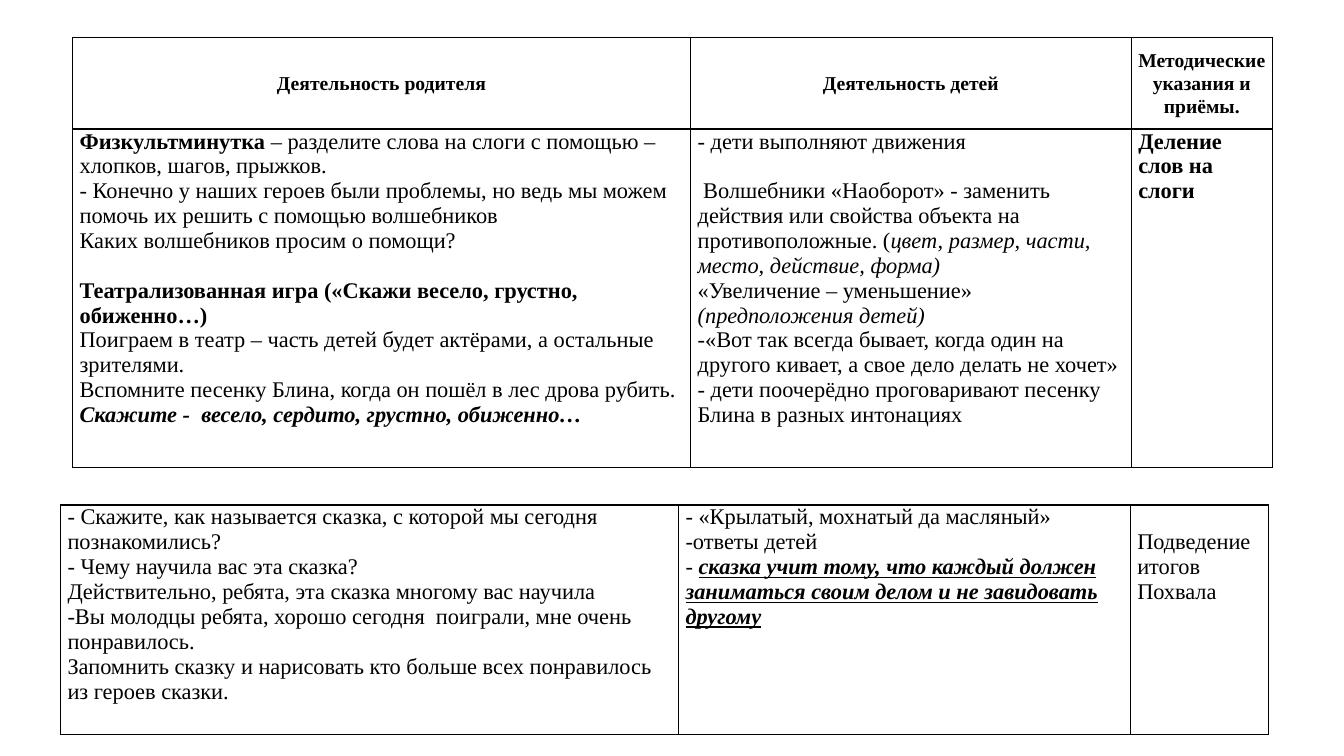
from pptx import Presentation, util as u
from pptx.dml.color import RGBColor
from pptx.enum import text
from pptx.oxml import parse_xml
from pptx.oxml.ns import nsdecls

INK, PAPER = "000000", "FFFFFF"


def color(value):
    return RGBColor.from_string(value)


def add_run(paragraph, content, font="Times New Roman", size=16, style=""):
    """Style letters: b is bold, i is italic, u is underlined."""
    run = paragraph.add_run()
    run.text = content
    run.font.name = font
    run.font.size = u.Pt(size)
    run.font.bold = "b" in style
    run.font.italic = "i" in style
    run.font.underline = "u" in style
    run.font.color.rgb = color(INK)


class LessonSlide:
    line_gap = u.Pt(17.7)
    side_margin = u.Inches(0.07)

    def __init__(self, presentation):
        self.slide = presentation.slides.add_slide(presentation.slide_layouts[6])

    def table(self, left, top, widths, heights):
        frame = self.slide.shapes.add_table(
            len(heights), len(widths), u.Inches(left), u.Inches(top),
            u.Inches(sum(widths)), u.Inches(sum(heights)))
        table = frame.table
        table.first_row = table.horz_banding = False
        for column, width in zip(table.columns, widths):
            column.width = u.Inches(width)
        for row, height in zip(table.rows, heights):
            row.height = u.Inches(height)
        for cell in table.iter_cells():
            self.cell_style(cell)
        return table

    def cell_style(self, cell):
        cell.margin_left = cell.margin_right = self.side_margin
        cell.margin_top = cell.margin_bottom = 0
        properties = cell._tc.get_or_add_tcPr()
        for side in "LRTB":
            properties.append(parse_xml(
                f'<a:ln{side} {nsdecls("a")} w="12700"><a:solidFill>'
                f'<a:srgbClr val="{INK}"/></a:solidFill></a:ln{side}>'))
        cell.fill.solid()
        cell.fill.fore_color.rgb = color(PAPER)

    def header(self, cell, title):
        cell.vertical_anchor = text.MSO_ANCHOR.MIDDLE
        paragraph = cell.text_frame.paragraphs[0]
        paragraph.alignment = text.PP_ALIGN.CENTER
        paragraph.line_spacing = 1.07
        add_run(paragraph, title, size=14, style="b")

    def body(self, cell, paragraphs, gap_before=None):
        """Each paragraph is a list of (words, style) runs."""
        frame = cell.text_frame
        for index, runs in enumerate(paragraphs):
            paragraph = frame.add_paragraph() if index else frame.paragraphs[0]
            if index == gap_before:
                if index:
                    paragraph.space_before = self.line_gap
                else:
                    cell.margin_top = self.line_gap
            for words, style in runs:
                add_run(paragraph, words, style=style)


HEADERS = ["Деятельность родителя", "Деятельность детей",
           "Методические указания и приёмы."]

PARENT_GAME = [
    [("Физкультминутка ", "b"),
     ("– разделите слова на слоги с помощью – хлопков, шагов, прыжков.", "")],
    [("- Конечно у наших героев были проблемы, но ведь мы можем помочь их "
      "решить с помощью волшебников", "")],
    [("Каких волшебников просим о помощи?", "")],
    [("Театрализованная игра («Скажи весело, грустно, обиженно…)", "b")],
    [("Поиграем в театр – часть детей будет актёрами, а остальные зрителями.", "")],
    [("Вспомните песенку Блина, когда он пошёл в лес дрова рубить.", "")],
    [("Скажите -  весело, сердито, грустно, обиженно…", "bi")],
]
CHILDREN_GAME = [
    [("- дети выполняют движения", "")],
    [(" Волшебники «Наоборот» - заменить действия или свойства объекта на "
      "противоположные. (", ""),
     ("цвет, размер, части, место, действие, форма)", "i")],
    [("«Увеличение – уменьшение»", "")],
    [("(предположения детей)", "i")],
    [("-«Вот так всегда бывает, когда один на другого кивает, а свое дело "
      "делать не хочет»", "")],
    [("- дети поочерёдно проговаривают песенку Блина в разных интонациях", "")],
]
METHOD_GAME = [[("Деление слов на слоги", "b")]]

PARENT_SUMMARY = [
    [("- Скажите, как называется сказка, с которой мы сегодня познакомились?", "")],
    [("- Чему научила вас эта сказка?", "")],
    [("Действительно, ребята, эта сказка многому вас научила", "")],
    [("-Вы молодцы ребята, хорошо сегодня  поиграли, мне очень понравилось.", "")],
    [("Запомнить сказку и нарисовать кто больше всех понравилось из героев "
      "сказки.", "")],
]
CHILDREN_SUMMARY = [
    [("- «Крылатый, мохнатый да масляный»", "")],
    [("-ответы детей", "")],
    [("- ", ""),
     ("сказка учит тому, что каждый должен заниматься своим делом и не "
      "завидовать другому", "biu")],
]
METHOD_SUMMARY = [[("Подведение итогов", "")], [("Похвала", "")]]


def main():
    presentation = Presentation()
    presentation.slide_width = u.Inches(13.33)
    presentation.slide_height = u.Inches(7.5)
    lesson = LessonSlide(presentation)

    # Game part of the lesson, with the column headers
    game = lesson.table(0.72, 0.37, [6.13, 4.37, 1.4], [0.91, 3.36])
    for column, title in enumerate(HEADERS):
        lesson.header(game.cell(0, column), title)
    lesson.body(game.cell(1, 0), PARENT_GAME, gap_before=3)
    lesson.body(game.cell(1, 1), CHILDREN_GAME, gap_before=1)
    lesson.body(game.cell(1, 2), METHOD_GAME)

    # Summary of the lesson
    summary = lesson.table(0.6, 5.01, [6.13, 4.48, 1.37], [2.28])
    lesson.body(summary.cell(0, 0), PARENT_SUMMARY)
    lesson.body(summary.cell(0, 1), CHILDREN_SUMMARY)
    lesson.body(summary.cell(0, 2), METHOD_SUMMARY, gap_before=0)

    presentation.save("out.pptx")


if __name__ == "__main__":
    main()
